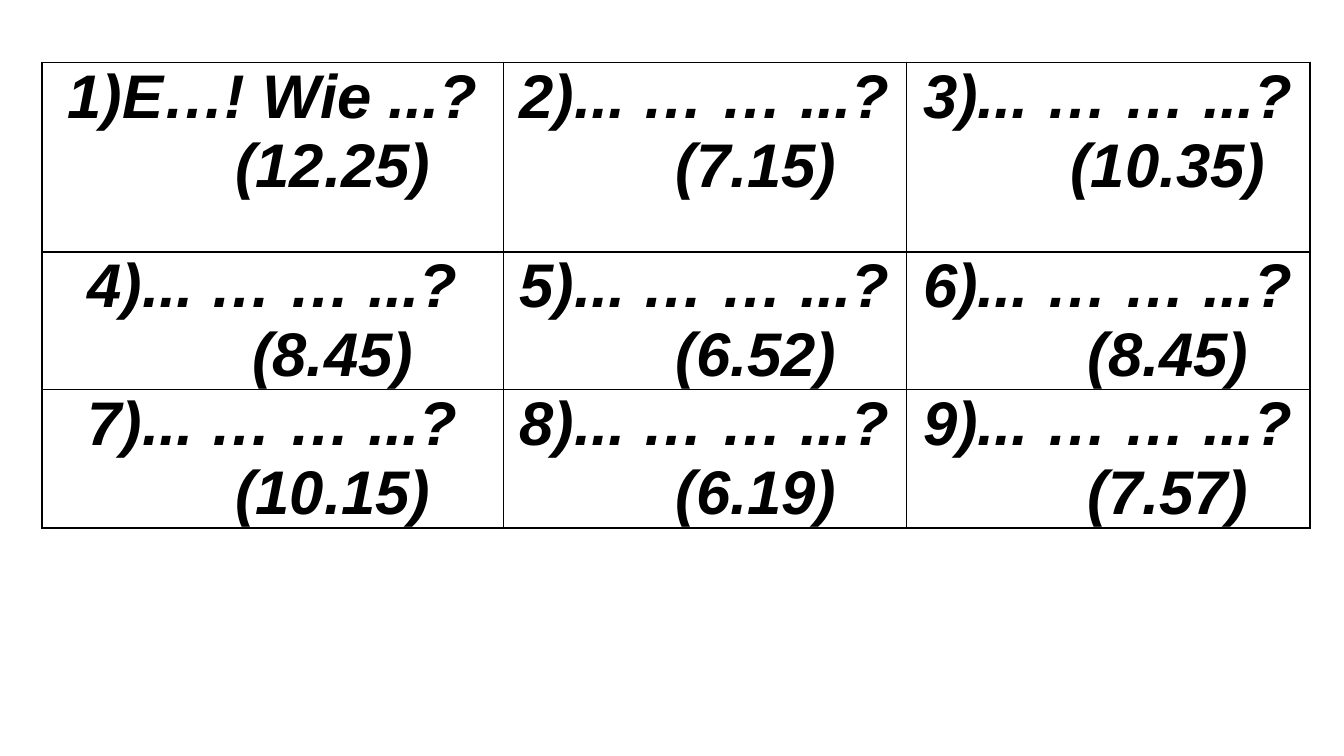
"""Build a slide with a three by three grid of clock-time questions."""
from lxml import etree
from pptx import Presentation
from pptx.dml.color import RGBColor
from pptx.enum.text import MSO_ANCHOR, PP_ALIGN
from pptx.oxml.ns import qn
from pptx.util import Inches, Pt

TOP = MSO_ANCHOR.TOP
CENTER = PP_ALIGN.CENTER

TASKS = [
    [("1)E…! Wie ...?", "(12.25)"), ("2)... … … ...?", "(7.15)"), ("3)... … … ...?", "(10.35)")],
    [("4)... … … ...?", "(8.45)"), ("5)... … … ...?", "(6.52)"), ("6)... … … ...?", "(8.45)")],
    [("7)... … … ...?", "(10.15)"), ("8)... … … ...?", "(6.19)"), ("9)... … … ...?", "(7.57)")],
]
WIDTHS = [4.57, 4, 4]
HEIGHTS = [1.88, 1.3, 1.3]
INDENTS = [1.19, 1.02, 1.19]
LEFT, UPPER = 0.42, 0.62
ROW_LINES = [1.5, 1.5, 1, 1.5]
COL_LINES = [1.5, 1, 1, 1.5]
THEME = {"font": "Arial", "size": 44, "ink": "000000"}


def add_line(para, text, indent=0):
    """Write one centred line, shifted by its left indent."""
    para.alignment = CENTER
    if indent:
        props = para._p.get_or_add_pPr()
        props.set("marL", str(Inches(indent)))
        props.set("indent", "0")
    run = para.add_run()
    run.text = text
    font = run.font
    font.name = THEME["font"]
    font.size = Pt(THEME["size"])
    font.bold = font.italic = True
    font.color.rgb = RGBColor.from_string(THEME["ink"])


def set_edges(cell, edges):
    """Draw the four borders of a cell in the given widths."""
    props = cell._tc.get_or_add_tcPr()
    for spot, (side, width) in enumerate(edges.items()):
        line = etree.Element(qn(f"a:ln{side}"), w=str(Pt(width)))
        fill = etree.SubElement(line, qn("a:solidFill"))
        etree.SubElement(fill, qn("a:srgbClr"), val=THEME["ink"])
        props.insert(spot, line)


def fill_cell(cell, row, col):
    """Set the text, margins and borders of one task."""
    cell.fill.background()
    cell.margin_left = cell.margin_right = Inches(0.05)
    cell.margin_top = cell.margin_bottom = 0
    cell.vertical_anchor = TOP
    prompt, time = TASKS[row][col]
    frame = cell.text_frame
    add_line(frame.paragraphs[0], prompt)
    add_line(frame.add_paragraph(), time, INDENTS[col])
    set_edges(cell, {
        "L": COL_LINES[col], "R": COL_LINES[col + 1],
        "T": ROW_LINES[row], "B": ROW_LINES[row + 1],
    })


def main():
    """Create the deck and save it."""
    deck = Presentation()
    deck.slide_width, deck.slide_height = Inches(13.33), Inches(7.5)
    slide = deck.slides.add_slide(deck.slide_layouts[6])
    grid = slide.shapes.add_table(
        len(HEIGHTS), len(WIDTHS), Inches(LEFT), Inches(UPPER),
        Inches(sum(WIDTHS)), Inches(sum(HEIGHTS)),
    ).table
    grid.first_row = grid.horz_banding = False
    for col, width in enumerate(WIDTHS):
        grid.columns[col].width = Inches(width)
    for row, height in enumerate(HEIGHTS):
        grid.rows[row].height = Inches(height)
        for col in range(len(WIDTHS)):
            fill_cell(grid.cell(row, col), row, col)
    deck.save("out.pptx")


if __name__ == "__main__":
    main()
